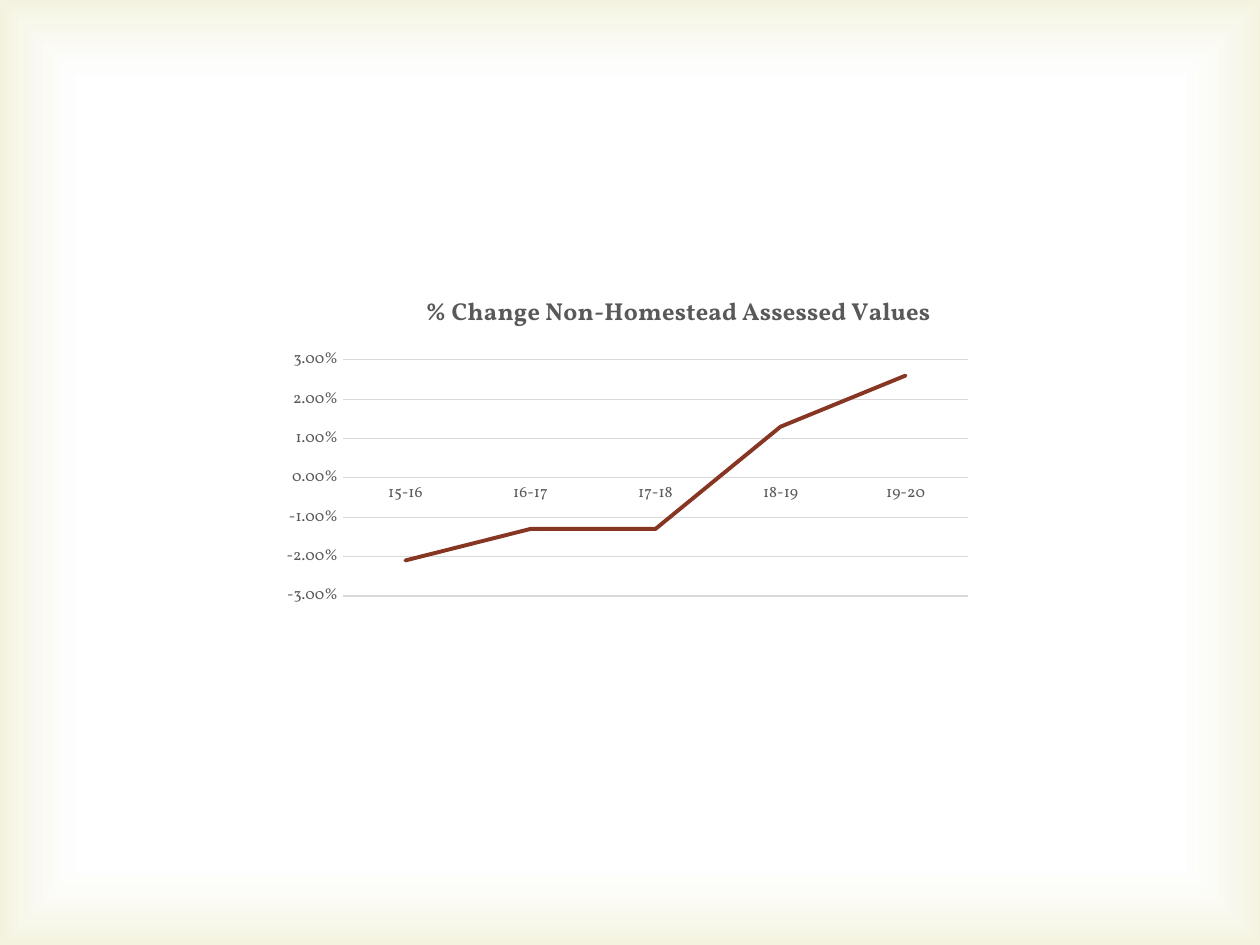
from lxml import etree
from pptx import Presentation
from pptx.chart.data import CategoryChartData
from pptx.dml.color import RGBColor
from pptx.enum.chart import XL_CHART_TYPE, XL_TICK_MARK
from pptx.enum.shapes import MSO_SHAPE
from pptx.oxml import parse_xml
from pptx.oxml.ns import nsdecls, qn
from pptx.util import Pt

PX = 914400 // 126
SLIDE_WIDTH, SLIDE_HEIGHT = 1260, 945
CHART_LEFT, CHART_TOP, CHART_WIDTH, CHART_HEIGHT = 272, 281, 709, 333
FONT = "Vollkorn"
GREY, GRID, RUST = "595959", "D9D9D9", "873624"
CHANGES = {
    "15-16": -0.021,
    "16-17": -0.013,
    "17-18": -0.013,
    "18-19": 0.013,
    "19-20": 0.026,
}


def px(length):
    return length * PX


def color(hex_string):
    return RGBColor.from_string(hex_string)


def style_font(font, size, hex_string, bold=False):
    font.name, font.size, font.bold = FONT, Pt(size), bold
    font.color.rgb = color(hex_string)


def style_line(line, hex_string, width):
    line.color.rgb = color(hex_string)
    line.width = Pt(width)


def write_text(frame, text, size, hex_string, bold=False):
    frame.text = text
    style_font(frame.paragraphs[0].runs[0].font, size, hex_string, bold)


def place(element, left, top, width=None, height=None, inner=False):
    """Set a manual layout, given in slide px, on a chart part."""
    for old in element.findall(qn("c:layout")):
        element.remove(old)
    layout = parse_xml(f"<c:layout {nsdecls('c')}><c:manualLayout/></c:layout>")
    entries = [("layoutTarget", "inner")] if inner else []
    entries += [("xMode", "edge"), ("yMode", "edge"),
                ("x", round((left - CHART_LEFT) / CHART_WIDTH, 3)),
                ("y", round((top - CHART_TOP) / CHART_HEIGHT, 3))]
    if width:
        entries += [("w", round(width / CHART_WIDTH, 3)),
                    ("h", round(height / CHART_HEIGHT, 3))]
    for tag, value in entries:
        etree.SubElement(layout[0], qn(f"c:{tag}")).set("val", str(value))
    text = element.find(qn("c:tx"))
    element.insert(0 if text is None else 1, layout)


def add_glow(slide):
    """Full-slide frame that fades from the edges to a white centre."""
    glow = slide.shapes.add_shape(MSO_SHAPE.RECTANGLE, 0, 0,
                                  px(SLIDE_WIDTH), px(SLIDE_HEIGHT))
    glow.shadow.inherit = False
    glow.line.fill.background()
    stops = "".join(
        f'<a:gs pos="{position}000"><a:srgbClr val="{hex_string}">'
        f'<a:alpha val="{alpha}000"/></a:srgbClr></a:gs>'
        for position, hex_string, alpha in [(83, "FFFFFF", 11), (100, "D1CA75", 23)])
    gradient = parse_xml(
        f'<a:gradFill {nsdecls("a")} rotWithShape="1"><a:gsLst>{stops}</a:gsLst>'
        '<a:path path="rect"><a:fillToRect l="50000" t="50000" r="50000" b="50000"/>'
        '</a:path></a:gradFill>')
    glow._element.spPr.find(qn("a:prstGeom")).addnext(gradient)


def style_axis(axis):
    axis.major_tick_mark = axis.minor_tick_mark = XL_TICK_MARK.NONE
    style_font(axis.tick_labels.font, 9, GREY)


def add_change_chart(slide):
    data = CategoryChartData(number_format="0.00%")
    data.categories = list(CHANGES)
    data.add_series("Series 1", list(CHANGES.values()))
    chart = slide.shapes.add_chart(
        XL_CHART_TYPE.LINE, px(CHART_LEFT), px(CHART_TOP),
        px(CHART_WIDTH), px(CHART_HEIGHT), data).chart
    style_font(chart.font, 10, "000000")
    chart.has_legend = False

    # Title
    write_text(chart.chart_title.text_frame,
               "% Change Non-Homestead Assessed Values", 14, GREY, bold=True)
    chart.chart_title.include_in_layout = False
    place(chart.chart_title._element, 421, 290)

    # Axes and gridlines
    years, percent = chart.category_axis, chart.value_axis
    style_axis(years)
    style_line(years.format.line, GRID, 0.75)
    style_axis(percent)
    percent.format.line.fill.background()
    percent.minimum_scale, percent.maximum_scale = -0.03, 0.03
    percent.major_unit = 0.01
    percent.tick_labels.number_format = "0.00%"
    percent.tick_labels.number_format_is_linked = False
    style_line(percent.major_gridlines.format.line, GRID, 0.75)

    # Line of yearly changes, with round ends
    plot = chart.plots[0]
    plot.vary_by_categories = False
    changes = plot.series[0]
    changes.smooth = False
    style_line(changes.format.line, RUST, 2.25)
    changes._element.spPr.find(qn("a:ln")).set("cap", "rnd")
    plot_area = chart._chartSpace.chart.plotArea
    place(plot_area, 343, 360, 625, 236, inner=True)


def main():
    presentation = Presentation()
    presentation.slide_width = px(SLIDE_WIDTH)
    presentation.slide_height = px(SLIDE_HEIGHT)
    slide = presentation.slides.add_slide(presentation.slide_layouts[6])
    add_glow(slide)
    add_change_chart(slide)
    presentation.save("out.pptx")


if __name__ == "__main__":
    main()
